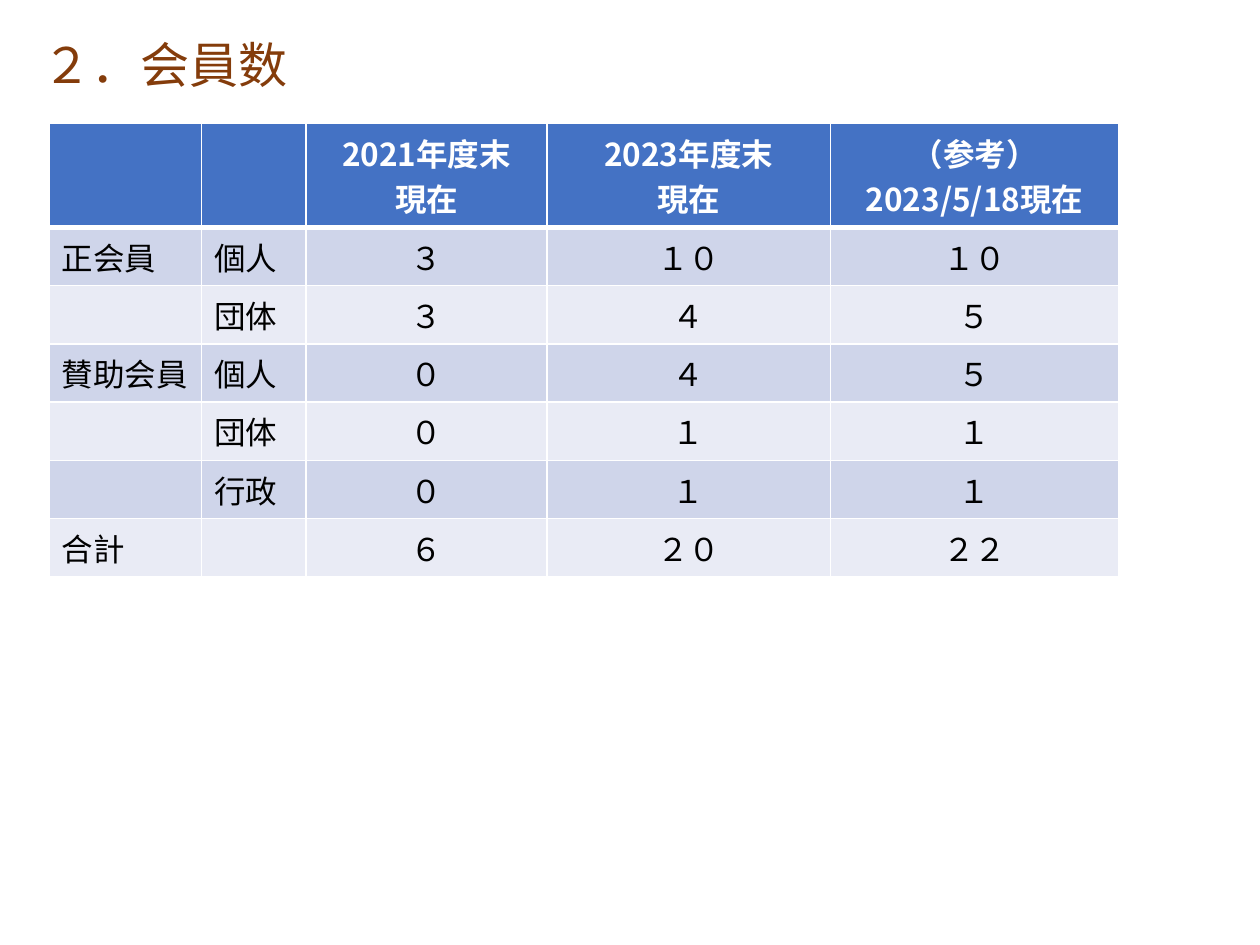
from dataclasses import dataclass

from lxml.etree import SubElement
from pptx import Presentation
from pptx.dml.color import RGBColor
from pptx.enum.text import MSO_ANCHOR, MSO_AUTO_SIZE, PP_ALIGN
from pptx.oxml.ns import qn
from pptx.util import Inches, Pt


@dataclass(frozen=True)
class Theme:
    font: str = "Noto Sans CJK JP"
    title_size: int = 28
    table_size: int = 18
    title: str = "843C0B"
    header: str = "4472C4"
    bands: tuple = ("CFD5EA", "E9EBF5")
    text: str = "000000"
    white: str = "FFFFFF"


theme = Theme()


def format_text(text_frame, size, color, bold, align):
    for para in text_frame.paragraphs:
        para.alignment = align
        para.font.size = Pt(size)
        for span in para.runs:
            span.font.name = theme.font
            span.font.size = Pt(size)
            span.font.bold = bold
            span.font.color.rgb = RGBColor.from_string(color)
            SubElement(span.font._element, qn("a:ea"), typeface=theme.font)


def set_borders(cell, bottom_width):
    properties = cell._tc.get_or_add_tcPr()
    widths = {"a:lnL": 1, "a:lnR": 1, "a:lnT": 1, "a:lnB": bottom_width}
    for index, (side, width) in enumerate(widths.items()):
        line = SubElement(properties, qn(side), w=str(Pt(width)))
        fill = SubElement(line, qn("a:solidFill"))
        SubElement(fill, qn("a:srgbClr"), val=theme.white)
        properties.insert(index, line)


deck = Presentation()
deck.slide_width = Inches(10)
deck.slide_height = Inches(7.5)
page = deck.slides.add_slide(deck.slide_layouts[5])

# Title
title = page.shapes.title
title.left, title.top = Inches(0.24), Inches(0.22)
title.width, title.height = Inches(2.17), Inches(0.57)
title.text_frame.text = "２．会員数"
title.text_frame.word_wrap = False
title.text_frame.auto_size = MSO_AUTO_SIZE.NONE
title.text_frame.vertical_anchor = MSO_ANCHOR.MIDDLE
format_text(title.text_frame, theme.title_size, theme.title, False, PP_ALIGN.LEFT)

# Member counts
member_rows = [
    ("", "", "2021年度末\n現在", "2023年度末\n現在", "（参考）\n2023/5/18現在"),
    ("正会員", "個人", "３", "１０", "１０"),
    ("", "団体", "３", "４", "５"),
    ("賛助会員", "個人", "０", "４", "５"),
    ("", "団体", "０", "１", "１"),
    ("", "行政", "０", "１", "１"),
    ("合計", "", "６", "２０", "２２"),
]
column_widths = [1.21, 0.83, 1.91, 2.25, 2.29]
label_columns = 2

table = page.shapes.add_table(
    len(member_rows), len(column_widths),
    Inches(0.39), Inches(0.98), Inches(8.49), Inches(3.13),
).table
for column, width in zip(table.columns, column_widths):
    column.width = Inches(width)

for row_index, values in enumerate(member_rows):
    table.rows[row_index].height = Inches(0.41)
    is_header = row_index == 0
    fill_color = theme.header if is_header else theme.bands[(row_index - 1) % 2]
    text_color = theme.white if is_header else theme.text
    for column_index, value in enumerate(values):
        cell = table.cell(row_index, column_index)
        cell.fill.solid()
        cell.fill.fore_color.rgb = RGBColor.from_string(fill_color)
        set_borders(cell, 3 if is_header else 1)
        cell.text_frame.text = value
        align = PP_ALIGN.LEFT if column_index < label_columns else PP_ALIGN.CENTER
        format_text(cell.text_frame, theme.table_size, text_color, is_header, align)

deck.save("out.pptx")
